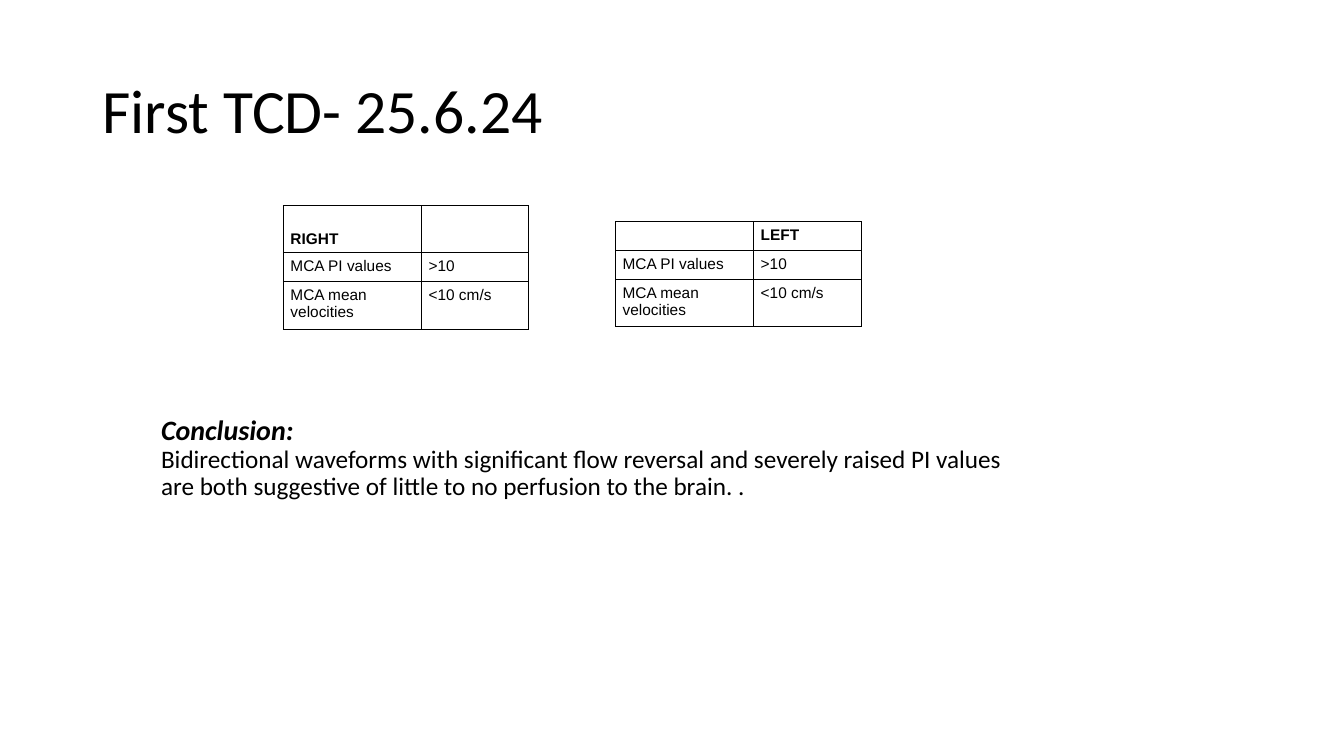
"""Builds a slide with transcranial Doppler results for both sides."""
from lxml import etree
from pptx import Presentation
from pptx.dml.color import RGBColor
from pptx.enum import text
from pptx.oxml import ns
from pptx.util import Cm, Pt

BLACK = "000000"
WHITE = "FFFFFF"
MEASUREMENTS = [("MCA PI values", ">10"), ("MCA mean velocities", "<10 cm/s")]
COLUMN_WIDTHS = (3.48, 2.71)
SINGLE_ROW = 0.72
DOUBLE_ROW = 1.19


def colour(value):
    """Return the colour of a hex string."""
    return RGBColor.from_string(value)


def place(shape, left, top, width, height):
    """Position a shape, with lengths in centimetres."""
    shape.left, shape.top = Cm(left), Cm(top)
    shape.width, shape.height = Cm(width), Cm(height)


def add_run(paragraph, content, size, font="Calibri", bold=False, italic=False):
    """Add one formatted black run."""
    run = paragraph.add_run()
    run.text = content
    run.font.name, run.font.size = font, Pt(size)
    run.font.bold, run.font.italic = bold, italic
    run.font.color.rgb = colour(BLACK)


def add_title(slide, content):
    """Fill the title placeholder."""
    title = slide.shapes.title
    place(title, 2.33, 1.01, 29.21, 3.68)
    title.text_frame.vertical_anchor = text.MSO_ANCHOR.MIDDLE
    paragraph = title.text_frame.paragraphs[0]
    paragraph.alignment = text.PP_ALIGN.LEFT
    paragraph.line_spacing = 0.9
    add_run(paragraph, content, 44)


def add_conclusion(slide, heading, content):
    """Add the conclusion under its heading."""
    box = slide.shapes.add_textbox(Cm(3.81), Cm(9.83), Cm(22.25), Cm(3.45))
    frame = box.text_frame
    frame.word_wrap = True
    frame.vertical_anchor = text.MSO_ANCHOR.MIDDLE
    add_run(frame.paragraphs[0], heading, 20, bold=True, italic=True)
    add_run(frame.add_paragraph(), content, 18)
    for paragraph in frame.paragraphs:
        paragraph.line_spacing = 0.9


def add_borders(cell):
    """Draw a thin black line on each side of a cell."""
    properties = cell._tc.get_or_add_tcPr()
    for side in ("a:lnL", "a:lnR", "a:lnT", "a:lnB"):
        line = etree.SubElement(properties, ns.qn(side), w=str(Pt(0.75)))
        fill = etree.SubElement(line, ns.qn("a:solidFill"))
        etree.SubElement(fill, ns.qn("a:srgbClr"), val=BLACK)


def fill_cell(cell, content, bold):
    """Format a cell and write its text."""
    add_borders(cell)
    cell.fill.solid()
    cell.fill.fore_color.rgb = colour(WHITE)
    cell.margin_left = cell.margin_right = Cm(0.18)
    cell.margin_top = cell.margin_bottom = Cm(0.13)
    paragraph = cell.text_frame.paragraphs[0]
    if content:
        add_run(paragraph, content, 11, "Arial", bold)
    else:
        etree.SubElement(paragraph._p, ns.qn("a:endParaRPr"), sz="1100")


def add_results(slide, left, top, header, header_height):
    """Add the table of one side and return it."""
    rows = [header, *MEASUREMENTS]
    heights = (header_height, SINGLE_ROW, DOUBLE_ROW)
    table = slide.shapes.add_table(
        len(rows), len(COLUMN_WIDTHS), Cm(left), Cm(top),
        Cm(sum(COLUMN_WIDTHS)), Cm(sum(heights))).table
    table.first_row = table.horz_banding = False
    for column, width in zip(table.columns, COLUMN_WIDTHS):
        column.width = Cm(width)
    for index, (values, height) in enumerate(zip(rows, heights)):
        table.rows[index].height = Cm(height)
        for position, value in enumerate(values):
            fill_cell(table.cell(index, position), value, bold=index == 0)
    return table


def main():
    """Build and save the slide."""
    presentation = Presentation()
    presentation.slide_width, presentation.slide_height = Cm(33.87), Cm(19.05)
    slide = presentation.slides.add_slide(presentation.slide_layouts[5])
    add_title(slide, "First TCD- 25.6.24")
    add_conclusion(
        slide, "Conclusion:",
        "Bidirectional waveforms with significant flow reversal and severely "
        "raised PI values are both suggestive of little to no perfusion to "
        "the brain. .")
    right = add_results(slide, 7.14, 5.18, ("RIGHT", ""), DOUBLE_ROW)
    right.cell(0, 0).vertical_anchor = text.MSO_ANCHOR.BOTTOM
    add_results(slide, 15.51, 5.58, ("", "LEFT"), SINGLE_ROW)
    presentation.save("out.pptx")


if __name__ == "__main__":
    main()
